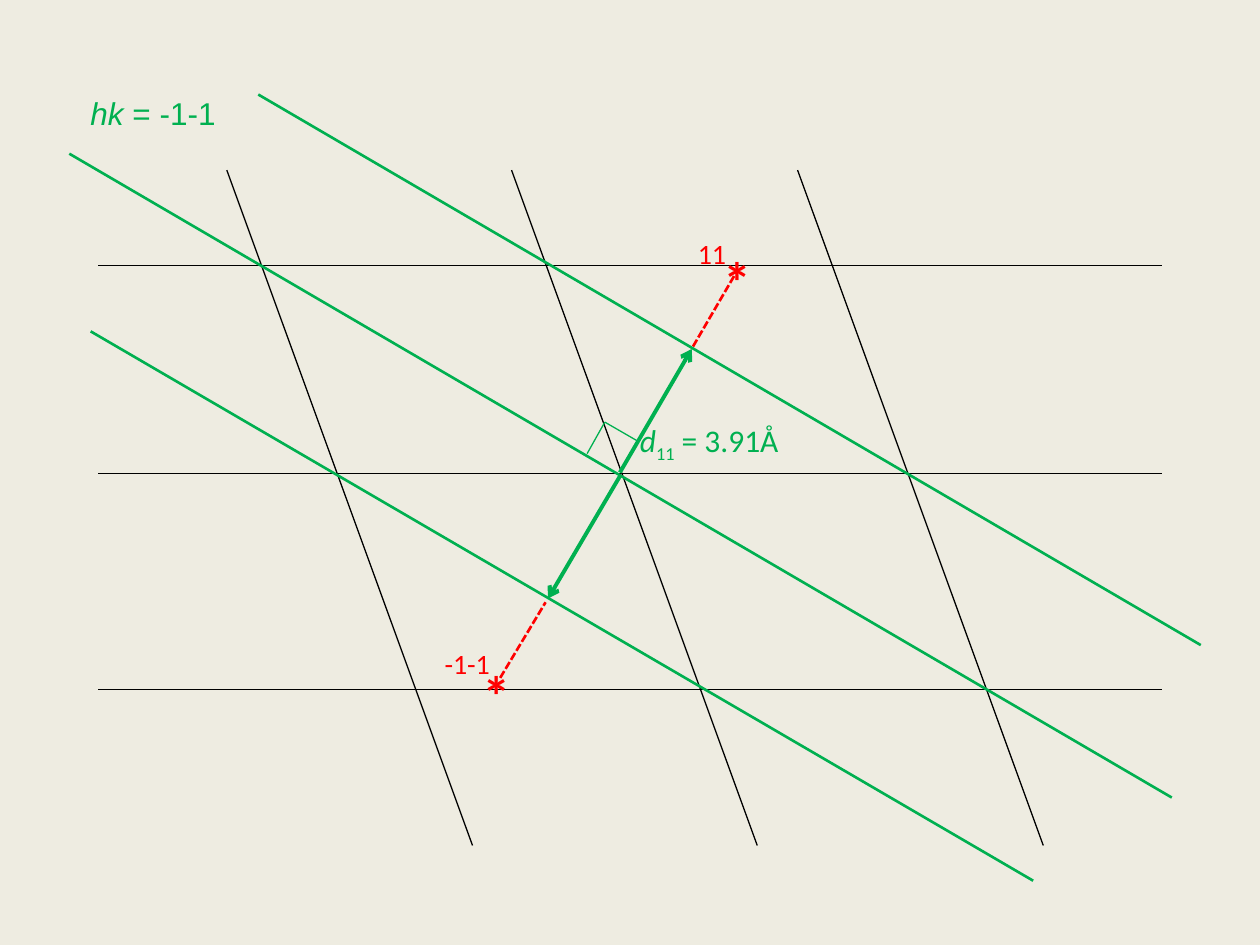
"""Build the slide that locates the (-1 -1) reciprocal lattice point."""
import dataclasses

import pptx
import pptx.dml.color
import pptx.enum.dml
import pptx.enum.shapes
import pptx.enum.text
import pptx.oxml
import pptx.util

Inches = pptx.util.Inches
Pt = pptx.util.Pt


@dataclasses.dataclass(frozen=True)
class Theme:
    background: str = "EEECE1"
    lattice: str = "000000"
    plane: str = "00B050"
    point: str = "FF0000"
    label_size: int = 18
    index_size: int = 16
    star_size: int = 32
    heading_font: str = "Arial"
    body_font: str = "Calibri"
    thin: float = 0.75
    medium: float = 1.5
    thick: float = 2.25


class LatticeSlide:
    def __init__(self, presentation, theme):
        self.theme = theme
        self.slide = presentation.slides.add_slide(presentation.slide_layouts[6])
        self.shapes = self.slide.shapes
        fill = self.slide.background.fill
        fill.solid()
        fill.fore_color.rgb = self.color(theme.background)

    def color(self, value):
        return pptx.dml.color.RGBColor.from_string(value)

    def group(self):
        self.shapes = self.slide.shapes.add_group_shape().shapes

    def ungroup(self):
        self.shapes = self.slide.shapes

    def run(self, paragraph, text, font, size, color, bold=False, italic=False, baseline=0):
        run = paragraph.add_run()
        run.text = text
        run.font.name = font
        run.font.size = Pt(size)
        run.font.color.rgb = self.color(color)
        run.font.bold = bold
        run.font.italic = italic
        if baseline:
            run.font._element.set("baseline", str(baseline * 1000))

    def line(self, start, end, color, width, dashed=False, arrow=False):
        connector = self.shapes.add_connector(
            pptx.enum.shapes.MSO_CONNECTOR.STRAIGHT,
            *(Inches(value) for value in start + end))
        connector.line.color.rgb = self.color(color)
        connector.line.width = Pt(width)
        if dashed:
            connector.line.dash_style = pptx.enum.dml.MSO_LINE.SQUARE_DOT
        properties = connector._element.spPr
        namespace = 'xmlns:a="http://schemas.openxmlformats.org/drawingml/2006/main"'
        if arrow:
            properties.ln.append(pptx.oxml.parse_xml(f'<a:tailEnd {namespace} type="arrow"/>'))
        properties.append(pptx.oxml.parse_xml(f"<a:effectLst {namespace}/>"))

    def label(self, box, runs, font, size, color):
        shape = self.shapes.add_textbox(*(Inches(value) for value in box))
        frame = shape.text_frame
        frame.word_wrap = False
        frame.auto_size = pptx.enum.text.MSO_AUTO_SIZE.SHAPE_TO_FIT_TEXT
        for text, style in runs:
            self.run(frame.paragraphs[0], text, font, size, color, **style)

    def lattice_point(self, star_corner, index, index_box):
        theme = self.theme
        self.group()
        self.label(star_corner + (0.43, 0.64), [("*", {"bold": True})],
                   theme.body_font, theme.star_size, theme.point)
        self.label(index_box, [(index, {})], theme.body_font, theme.index_size, theme.point)
        self.ungroup()


def main():
    presentation = pptx.Presentation()
    presentation.slide_width, presentation.slide_height = Inches(10), Inches(7.5)
    theme = Theme()
    page = LatticeSlide(presentation, theme)

    page.line((5.5, 2.75), (5.85, 2.15), theme.point, theme.medium, dashed=True)
    for row in (3.76, 5.47, 2.11):
        page.line((0.78, row), (9.22, row), theme.lattice, theme.thin)
    for left in (4.06, 1.8, 6.33):
        page.line((left, 1.35), (left + 1.95, 6.71), theme.lattice, theme.thin)

    page.group()
    planes = [((0.55, 1.22), (9.3, 6.33)), ((0.72, 2.63), (8.2, 6.99)),
              ((2.05, 0.75), (9.53, 5.12))]
    for start, end in planes:
        page.line(start, end, theme.plane, theme.medium)
    page.ungroup()
    page.label((0.62, 0.7, 1.2, 0.4), [("hk", {"italic": True}), (" = -1-1", {})],
               theme.heading_font, theme.label_size, theme.plane)

    page.group()
    page.line((4.92, 3.75), (5.49, 2.77), theme.plane, theme.thick, arrow=True)
    page.label((4.98, 3.29, 1.78, 0.51),
               [("d", {"italic": True}), ("11", {"baseline": -25}), (" = 3.91Å", {})],
               theme.body_font, theme.label_size, theme.plane)
    right_angle = [(4.66, 3.6), (4.8, 3.35), (5.06, 3.5)]
    for start, end in zip(right_angle, right_angle[1:]):
        page.line(start, end, theme.plane, theme.thin)
    page.ungroup()

    page.line((4.92, 3.78), (4.35, 4.75), theme.plane, theme.thick, arrow=True)
    page.lattice_point((3.73, 5.19), "-1-1", (3.43, 5.08, 0.57, 0.37))
    page.line((3.97, 5.38), (4.33, 4.78), theme.point, theme.medium, dashed=True)
    page.lattice_point((5.64, 1.91), "11", (5.44, 1.83, 0.43, 0.37))
    presentation.save("out.pptx")


if __name__ == "__main__":
    main()
